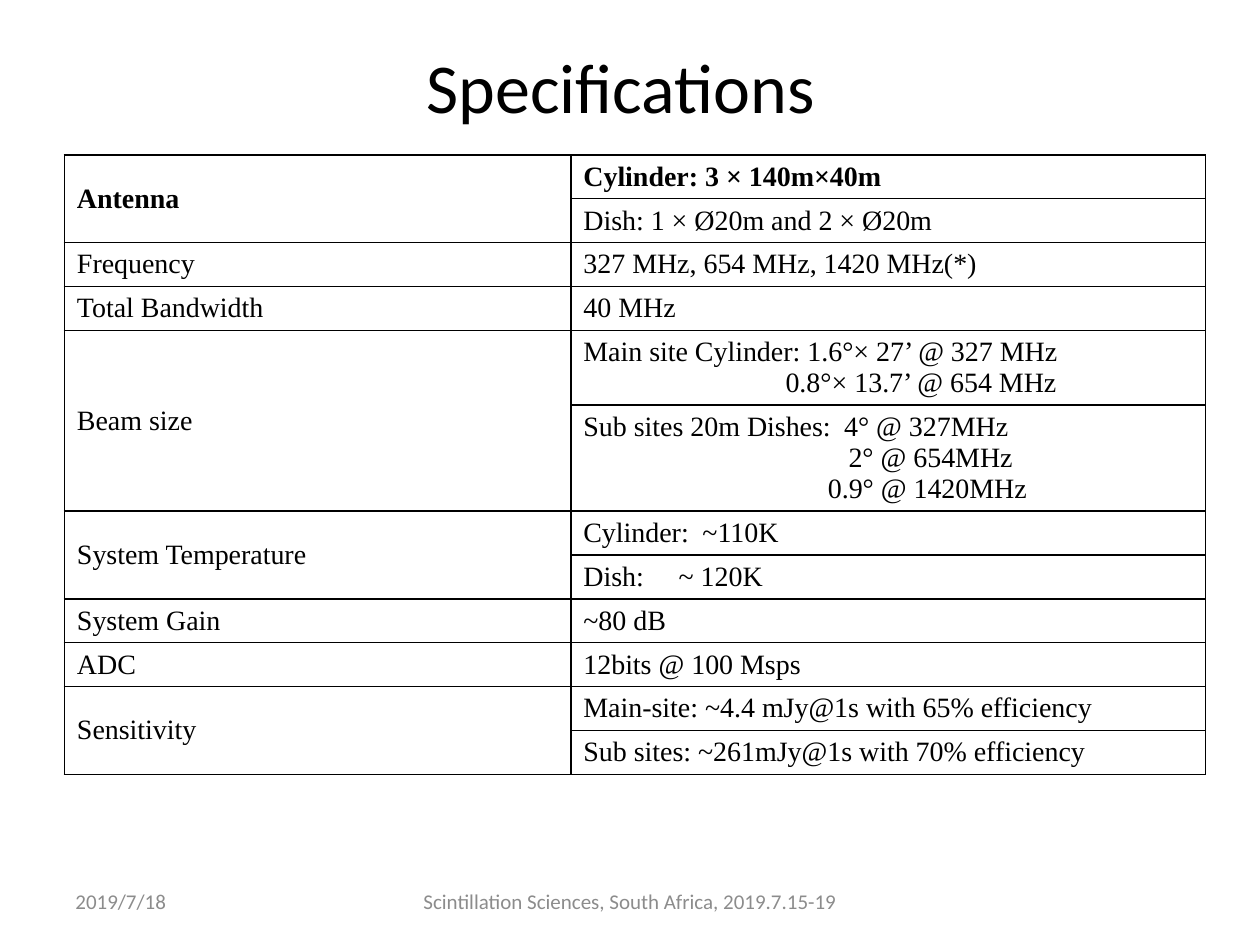
import pptx
import pptx.dml.color
import pptx.enum.text
import pptx.oxml
import pptx.oxml.ns
import pptx.util
from dataclasses import dataclass

Pt = pptx.util.Pt
RGB = pptx.dml.color.RGBColor
Align = pptx.enum.text.PP_ALIGN
Anchor = pptx.enum.text.MSO_ANCHOR

BLACK = RGB(0, 0, 0)
GREY = RGB(0x8C, 0x8C, 0x8C)
NS = pptx.oxml.ns.nsdecls("a")
COLS = (289.4, 362.8)
ROW = 25.06
LINE = 17.75


@dataclass
class Line:
    text: str
    indent: float = 0
    tab: float = 0


@dataclass
class Spec:
    """A label and the value cells it spans, each a list of lines."""
    label: str
    cells: list[list[Line]]
    bold: bool = False


@dataclass
class Box:
    text: str
    left: float
    top: float
    width: float
    height: float
    size: float
    color: RGB
    align: Align
    anchor: Anchor


SPECS = [
    Spec("Antenna", [[Line("Cylinder: 3 × 140m×40m")],
                     [Line("Dish: 1 × Ø20m and 2 × Ø20m")]], bold=True),
    Spec("Frequency", [[Line("327 MHz, 654 MHz, 1420 MHz(*)")]]),
    Spec("Total Bandwidth", [[Line("40 MHz")]]),
    Spec("Beam size", [
        [Line("Main site Cylinder: 1.6°× 27’ @ 327 MHz"),
         Line("0.8°× 13.7’ @ 654 MHz", indent=115.5)],
        [Line("Sub sites 20m Dishes:\t4° @ 327MHz", tab=149),
         Line("2° @ 654MHz", indent=151.5),
         Line("0.9° @ 1420MHz", indent=139.7)]]),
    Spec("System Temperature", [[Line("Cylinder:\t~110K", tab=68)],
                                [Line("Dish:\t~ 120K", tab=54.4)]]),
    Spec("System Gain", [[Line("~80 dB")]]),
    Spec("ADC", [[Line("12bits @ 100 Msps")]]),
    Spec("Sensitivity", [[Line("Main-site: ~4.4 mJy@1s with 65% efficiency")],
                         [Line("Sub sites: ~261mJy@1s with 70% efficiency")]]),
]

BOXES = [
    Box("Specifications", 150.5, 21.6, 408.2, 55.4, 40, BLACK,
        Align.CENTER, Anchor.TOP),
    Box("2019/7/18", 36, 500.4, 168, 28.8, 12, GREY,
        Align.LEFT, Anchor.MIDDLE),
    Box("Scintillation Sciences, South Africa, 2019.7.15-19",
        223.9, 500.4, 272.2, 28.8, 12, GREY, Align.CENTER, Anchor.MIDDLE),
]


def write(para, text: str, *, font: str, size: float, color: RGB,
          align: Align, bold: bool = False) -> None:
    para.alignment = align
    run = para.add_run()
    run.text = text
    run.font.name = font
    run.font.size = Pt(size)
    run.font.bold = bold
    run.font.color.rgb = color


def shift(para, line: Line) -> None:
    """Apply the left indent and tab stop of a line."""
    props = para._p.get_or_add_pPr()
    if line.indent:
        props.set("marL", str(Pt(line.indent)))
        props.set("indent", "0")
    if line.tab:
        props.append(pptx.oxml.parse_xml(
            f'<a:tabLst {NS}><a:tab pos="{Pt(line.tab)}" algn="l"/></a:tabLst>'))


def frame(cell) -> None:
    """Clear the fill and rule all four sides."""
    cell.fill.background()
    props = cell._tc.get_or_add_tcPr()
    for spot, side in enumerate("LRTB"):
        props.insert(spot, pptx.oxml.parse_xml(
            f'<a:ln{side} {NS} w="{Pt(1)}"><a:solidFill>'
            f'<a:srgbClr val="{BLACK}"/></a:solidFill></a:ln{side}>'))


def fill(cell, lines: list[Line], bold: bool) -> None:
    cell.vertical_anchor = Anchor.MIDDLE
    body = cell.text_frame
    for spot, line in enumerate(lines):
        para = body.add_paragraph() if spot else body.paragraphs[0]
        write(para, line.text, font="Times New Roman", size=16,
              color=BLACK, align=Align.JUSTIFY, bold=bold)
        shift(para, line)


def draw_grid(slide, specs: list[Spec]) -> None:
    highs = [ROW + LINE * (len(lines) - 1)
             for spec in specs for lines in spec.cells]
    grid = slide.shapes.add_table(
        len(highs), len(COLS), Pt(36.8), Pt(88.5),
        Pt(sum(COLS)), Pt(sum(highs))).table
    grid.first_row = grid.horz_banding = False
    for col, width in zip(grid.columns, COLS):
        col.width = Pt(width)
    for row, high in zip(grid.rows, highs):
        row.height = Pt(high)
        for cell in row.cells:
            frame(cell)
    top = 0
    for spec in specs:
        count = len(spec.cells)
        head = grid.cell(top, 0)
        if count > 1:
            head.merge(grid.cell(top + count - 1, 0))
        fill(head, [Line(spec.label)], spec.bold)
        for step, lines in enumerate(spec.cells):
            fill(grid.cell(top + step, 1), lines, spec.bold and step == 0)
        top += count


def draw_box(slide, box: Box) -> None:
    body = slide.shapes.add_textbox(
        Pt(box.left), Pt(box.top), Pt(box.width), Pt(box.height)).text_frame
    body.word_wrap = True
    body.vertical_anchor = box.anchor
    write(body.paragraphs[0], box.text, font="Calibri", size=box.size,
          color=box.color, align=box.align)


def main() -> None:
    deck = pptx.Presentation()
    deck.slide_width, deck.slide_height = Pt(720), Pt(540)
    slide = deck.slides.add_slide(deck.slide_layouts[6])
    draw_grid(slide, SPECS)
    for box in BOXES:
        draw_box(slide, box)
    deck.save("out.pptx")


if __name__ == "__main__":
    main()
